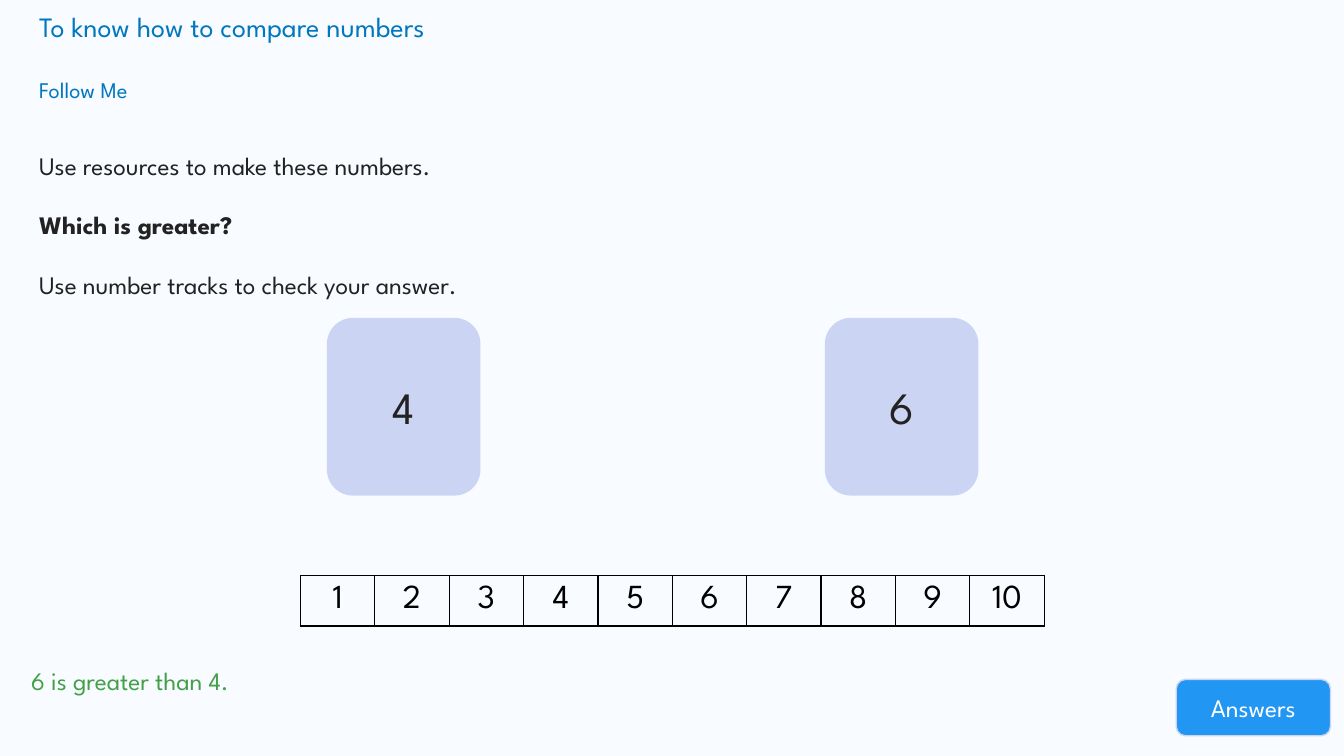
from lxml.etree import SubElement
from pptx import Presentation
from pptx.dml.color import RGBColor
from pptx.enum.shapes import MSO_SHAPE
from pptx.enum.text import MSO_ANCHOR, PP_ALIGN
from pptx.oxml.ns import qn
from pptx.util import Pt

PAPER = RGBColor(0xF8, 0xFB, 0xFF)
TITLE = RGBColor(0x02, 0x77, 0xBD)
INK = RGBColor(0x22, 0x22, 0x22)
GREEN = RGBColor(0x43, 0xA0, 0x47)
BLUE = RGBColor(0x21, 0x96, 0xF3)
LILAC = RGBColor(0xCC, 0xD4, 0xF4)
WHITE = RGBColor(0xFF, 0xFF, 0xFF)
BLACK = RGBColor(0, 0, 0)
FACE = "League Spartan"


def style(para, size, color, bold=False, **layout):
    looks = {"name": FACE, "size": Pt(size), "bold": bold}
    for key, value in looks.items():
        setattr(para.font, key, value)
    para.font.color.rgb = color
    for key, value in layout.items():
        setattr(para, key, value)


def add_text(slide, box, lines, size, color, gap=0, **layout):
    """Write (text, bold) lines in a box, with a gap between them."""
    frame = slide.shapes.add_textbox(*map(Pt, box)).text_frame
    frame.word_wrap = True
    for i, (text, bold) in enumerate(lines):
        para = frame.add_paragraph() if i else frame.paragraphs[0]
        para.text = text
        style(para, size, color, bold, **layout)
        if i:
            para.space_before = Pt(gap)


def add_card(slide, box, text, size, color, fill):
    card = slide.shapes.add_shape(MSO_SHAPE.ROUNDED_RECTANGLE, *map(Pt, box))
    card.shadow.inherit = False
    card.fill.solid()
    card.fill.fore_color.rgb = fill
    card.line.color.rgb = LILAC
    card.line.width = Pt(1)
    frame = card.text_frame
    frame.vertical_anchor = MSO_ANCHOR.MIDDLE
    frame.text = text
    style(frame.paragraphs[0], size, color, alignment=PP_ALIGN.CENTER)


def add_border(cell):
    props = cell._tc.get_or_add_tcPr()
    for i, side in enumerate(("lnL", "lnR", "lnT", "lnB")):
        line = props.makeelement(qn(f"a:{side}"), {"w": str(Pt(1))})
        fill = SubElement(line, qn("a:solidFill"))
        SubElement(fill, qn("a:srgbClr"), val=str(BLACK))
        props.insert(i, line)


def add_track(slide, box, count):
    """Draw a number track from 1 to count."""
    table = slide.shapes.add_table(1, count, *map(Pt, box)).table
    table.first_row = table.horz_banding = False
    for i, cell in enumerate(table.iter_cells()):
        table.columns[i].width = Pt(box[2] / count)
        cell.fill.background()
        cell.vertical_anchor = MSO_ANCHOR.MIDDLE
        cell.text = str(i + 1)
        style(cell.text_frame.paragraphs[0], 24, BLACK,
              alignment=PP_ALIGN.CENTER)
        add_border(cell)


def add_head(slide, box):
    left, top, width, height = box
    add_text(slide, (left, top, width, 32),
             [("To know how to compare numbers", False)], 20, TITLE)
    add_text(slide, (left, top + 48.2, 214, 33),
             [("Follow Me", False)], 16, TITLE)
    task = [("Use resources to make these numbers.", False),
            ("Which is greater?", True),
            ("Use number tracks to check your answer.", False)]
    add_text(slide, (left, top + 90, width, height - 90), task, 18, INK,
             gap=10, line_spacing=1.5)


def add_pair(slide, box, pair):
    """Place two number cards at the ends of a box."""
    left, top, width, height = box
    wide = 108.7
    for i, number in enumerate(pair):
        spot = (left + i * (width - wide), top, wide, height)
        add_card(slide, spot, str(number), 32, INK, LILAC)


def add_foot(slide, box):
    left, top, width, height = box
    add_text(slide, (left, top, 438, 29),
             [("6 is greater than 4.", False)], 18, GREEN)
    add_card(slide, (left + width - 110.2, top + height - 40.3, 110.2, 40.3),
             "Answers", 18, WHITE, BLUE)


def main():
    deck = Presentation()
    deck.slide_width, deck.slide_height = Pt(960), Pt(540)
    slide = deck.slides.add_slide(deck.slide_layouts[6])
    slide.background.fill.solid()
    slide.background.fill.fore_color.rgb = PAPER
    add_head(slide, (20.9, 2.9, 924.5, 224.6))
    add_pair(slide, (234, 227.5, 464.4, 126), (4, 6))
    add_track(slide, (214.6, 411.1, 531.4, 36), 10)
    add_foot(slide, (15.1, 471.6, 935.3, 54))
    deck.save("out.pptx")


if __name__ == "__main__":
    main()
